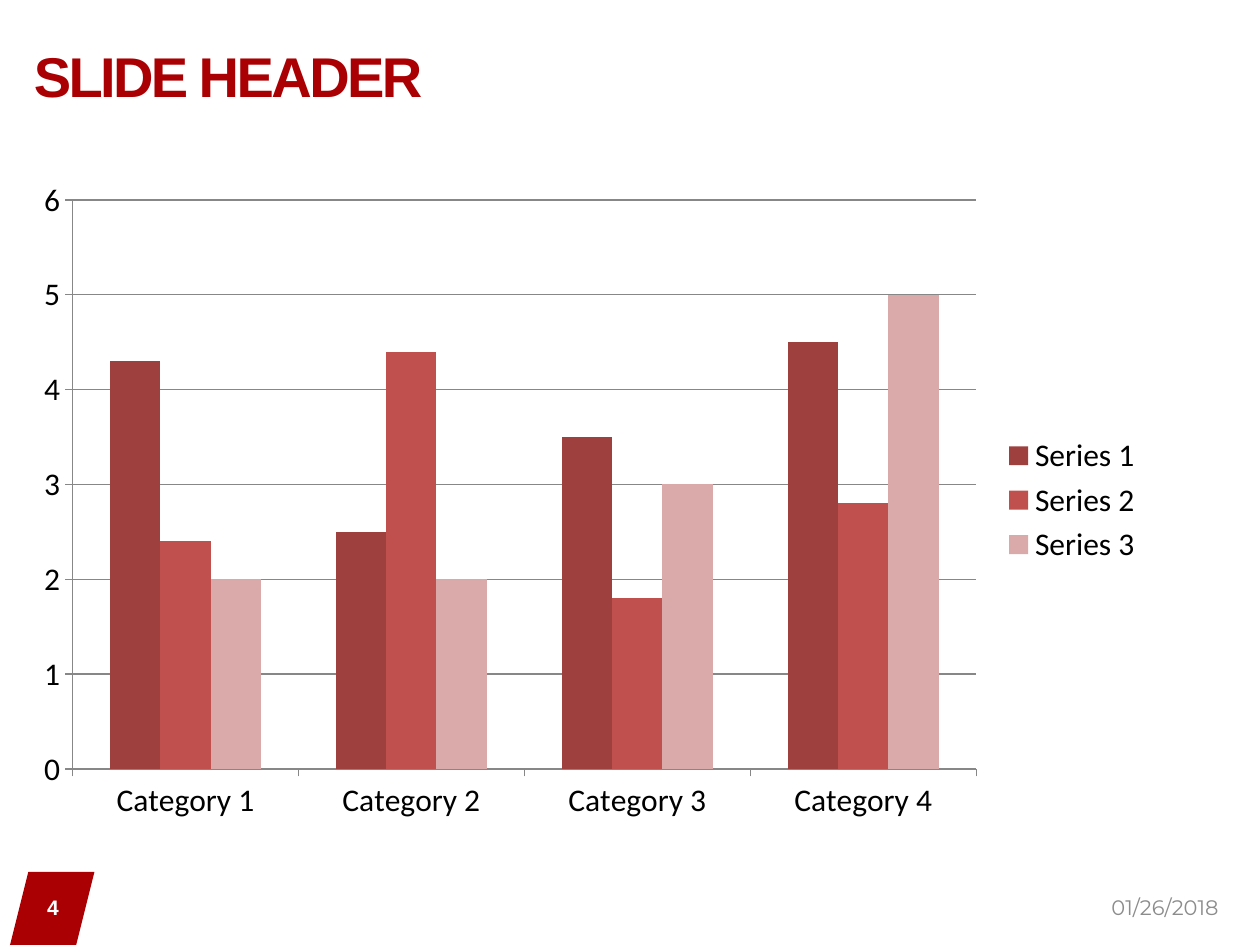
"""Build a slide with a clustered column chart, a header and a footer."""
from pptx import Presentation
from pptx.chart.data import CategoryChartData
from pptx.dml.color import RGBColor
from pptx.enum.chart import XL_CHART_TYPE, XL_LEGEND_POSITION, XL_TICK_MARK
from pptx.enum.shapes import MSO_SHAPE
from pptx.enum.text import MSO_ANCHOR, PP_ALIGN
from pptx.util import Inches, Pt

RED = RGBColor(0xAB, 0x00, 0x03)
WHITE = RGBColor(0xFF, 0xFF, 0xFF)
BLACK = RGBColor(0x00, 0x00, 0x00)
GRAY = RGBColor(0x8C, 0x8C, 0x8C)
AXIS_GRAY = RGBColor(0x87, 0x87, 0x87)
DARK_RED = RGBColor(0x9E, 0x41, 0x3E)
MID_RED = RGBColor(0xC0, 0x50, 0x4D)
PINK = RGBColor(0xD9, 0xAA, 0xA9)
COLUMN = XL_CHART_TYPE.COLUMN_CLUSTERED
LEGEND_RIGHT = XL_LEGEND_POSITION.RIGHT
TICK_OUT = XL_TICK_MARK.OUTSIDE
TICK_NONE = XL_TICK_MARK.NONE
PARALLELOGRAM = MSO_SHAPE.PARALLELOGRAM
MIDDLE = MSO_ANCHOR.MIDDLE
LEFT, CENTER, RIGHT = PP_ALIGN.LEFT, PP_ALIGN.CENTER, PP_ALIGN.RIGHT


def set_font(font, color, **formats):
    for name, value in formats.items():
        setattr(font, name, value)
    font.color.rgb = color


def add_text(s, box, text, align, color, **formats):
    tf = s.shapes.add_textbox(*map(Inches, box)).text_frame
    tf.word_wrap = True
    tf.vertical_anchor = MIDDLE
    p = tf.paragraphs[0]
    p.alignment = align
    r = p.add_run()
    r.text = text
    set_font(r.font, color, **formats)
    return r


prs = Presentation()
prs.slide_width, prs.slide_height = Inches(10), Inches(7.5)
s = prs.slides.add_slide(prs.slide_layouts[6])

sp = s.shapes.add_shape(PARALLELOGRAM, Inches(0.08), Inches(6.92), Inches(0.67), Inches(0.58))
sp.shadow.inherit = False
sp.fill.solid()
sp.fill.fore_color.rgb = RED
sp.line.fill.background()

r = add_text(s, (0.17, 0.19, 8.25, 0.81), "SLIDE HEADER", LEFT, RED,
             name="Arial", size=Pt(32), bold=True)
r.font._element.set("spc", "-150")

data = CategoryChartData()
data.categories = [f"Category {n}" for n in range(1, 5)]
series_values = [(4.3, 2.5, 3.5, 4.5), (2.4, 4.4, 1.8, 2.8), (2, 2, 3, 5)]
for n, values in enumerate(series_values, 1):
    data.add_series(f"Series {n}", values)
chart = s.shapes.add_chart(COLUMN, Inches(0.17), Inches(1.33), Inches(9), Inches(5.28), data).chart
set_font(chart.font, BLACK, name="Calibri", size=Pt(18))
chart.has_title = False
chart.has_legend = True
chart.legend.position = LEGEND_RIGHT
chart.legend.include_in_layout = False

plot = chart.plots[0]
plot.gap_width = 150
plot.overlap = 0
plot.vary_by_categories = False
for series, color in zip(plot.series, (DARK_RED, MID_RED, PINK)):
    series.format.fill.solid()
    series.format.fill.fore_color.rgb = color

value_axis = chart.value_axis
value_axis.minimum_scale, value_axis.maximum_scale, value_axis.major_unit = 0, 6, 1
value_axis.has_major_gridlines = True
for axis in (chart.category_axis, value_axis):
    axis.major_tick_mark = TICK_OUT
    axis.minor_tick_mark = TICK_NONE
for part in (chart.category_axis, value_axis, value_axis.major_gridlines):
    part.format.line.color.rgb = AXIS_GRAY
    part.format.line.width = Pt(0.75)

add_text(s, (7.44, 7, 2.33, 0.4), "01/26/2018", RIGHT, GRAY, name="Montserrat", size=Pt(12))
add_text(s, (0.17, 7, 0.5, 0.4), "4", CENTER, WHITE, name="Arial", size=Pt(12), bold=True)

prs.save("out.pptx")
